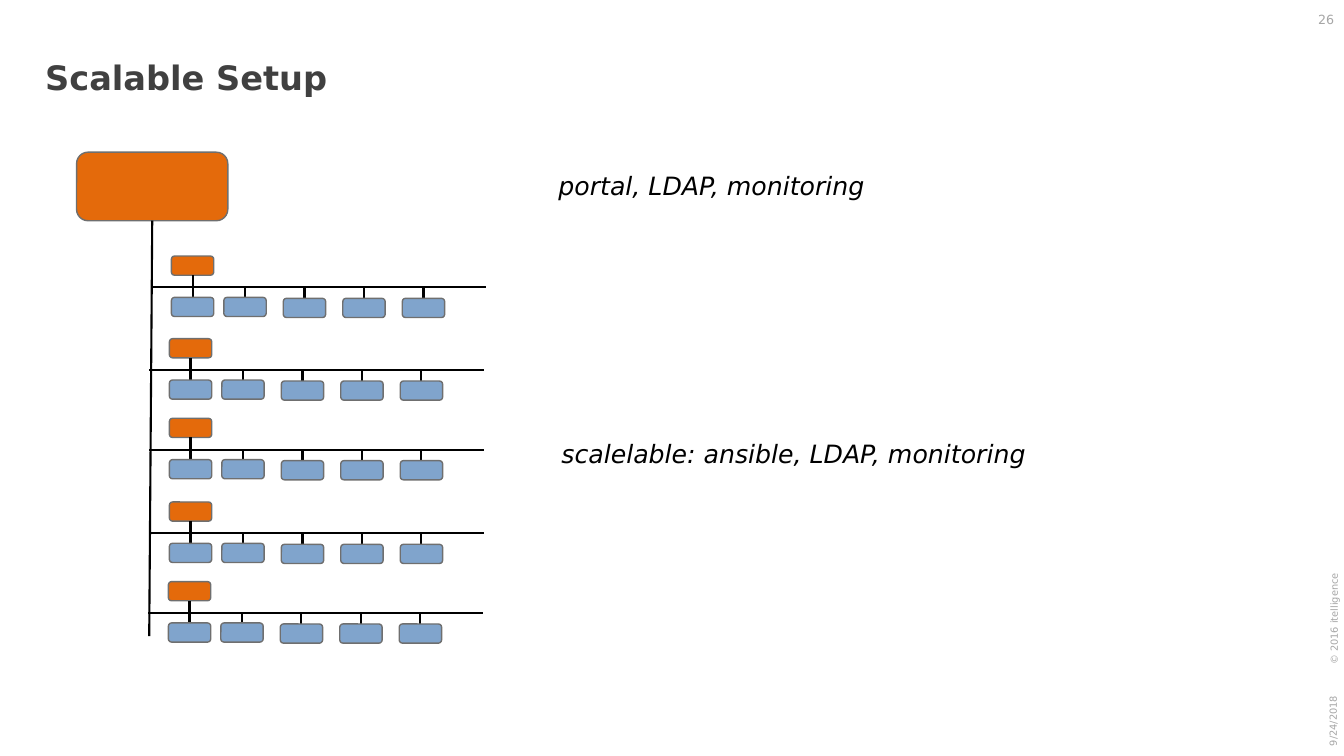
from lxml import etree
from pptx import Presentation
from pptx.dml.color import RGBColor
from pptx.enum.shapes import MSO_CONNECTOR, MSO_SHAPE
from pptx.enum.text import MSO_ANCHOR, PP_ALIGN
from pptx.oxml.ns import qn
from pptx.util import Inches, Pt

ROUNDED, STRAIGHT = MSO_SHAPE.ROUNDED_RECTANGLE, MSO_CONNECTOR.STRAIGHT
TOP, MIDDLE = MSO_ANCHOR.TOP, MSO_ANCHOR.MIDDLE
LEFT, RIGHT = PP_ALIGN.LEFT, PP_ALIGN.RIGHT

ORANGE = RGBColor(0xE4, 0x6A, 0x0B)
BLUE = RGBColor(0x80, 0xA4, 0xCC)
OUTLINE = RGBColor(0x6F, 0x6F, 0x6F)
BLACK = RGBColor(0, 0, 0)
DARK_GRAY = RGBColor(0x40, 0x40, 0x40)
LIGHT_GRAY = RGBColor(0xA6, 0xA6, 0xA6)

# Content: text, box (left, top, width, height), format
TITLE = {"size": Pt(24), "bold": True, "color": DARK_GRAY, "anchor": TOP}
NOTE = {"size": Pt(18), "italic": True, "color": BLACK}
FOOTER = {"size": Pt(7), "color": LIGHT_GRAY, "rotation": 270}
PAGE = {"size": Pt(9), "color": LIGHT_GRAY, "align": RIGHT}
TEXTS = [
    ("Scalable Setup", (0.35, 0.56, 3.05, 0.84), TITLE),
    ("portal, LDAP, monitoring", (5.44, 1.64, 3.32, 0.4), NOTE),
    ("scalelable: ansible, LDAP, monitoring", (5.47, 4.3, 4.97, 0.4), NOTE),
    ("9/24/2018", (12.82, 7, 0.8, 0.2), FOOTER),
    ("© 2016 itelligence", (10.48, 3.84, 5.5, 0.2), FOOTER),
    ("26", (12.8, 0, 0.53, 0.39), PAGE),
]

# Network: head server, trunk and the top left corner of each cluster
HEAD = (0.76, 1.51, 1.5, 0.68)
TRUNK = (1.48, 6.31, 1.51, 2.19)
CLUSTERS = [(1.7, 2.54), (1.68, 3.36), (1.68, 4.15), (1.68, 4.98), (1.67, 5.77)]
BOX_W, BOX_H = 0.42, 0.19
BUS_START, BUS_END, BUS_DROP = -0.2, 3.12, 0.31
NODE_COUNT, FIRST_GAP, NODE_PITCH = 5, 0.52, 0.59
NODE_DROP = 0.41

prs = Presentation()
prs.slide_width, prs.slide_height = Inches(13.33), Inches(7.5)
slide = prs.slides.add_slide(prs.slide_layouts[6])


def add_text(text, box, style):
    label = slide.shapes.add_textbox(*map(Inches, box))
    label.rotation = style.get("rotation", 0)
    frame = label.text_frame
    frame.word_wrap = True
    frame.vertical_anchor = style.get("anchor", MIDDLE)
    paragraph = frame.paragraphs[0]
    paragraph.alignment = style.get("align", LEFT)
    if style is TITLE:
        paragraph.line_spacing = 0.9
    run = paragraph.add_run()
    run.text = text
    run.font.name = "DejaVu Sans"
    run.font.color.rgb = style["color"]
    for attribute in ("size", "bold", "italic"):
        if attribute in style:
            setattr(run.font, attribute, style[attribute])


def add_server(left, top, width, height, color):
    server = slide.shapes.add_shape(ROUNDED, *map(Inches, (left, top, width, height)))
    server.shadow.inherit = False
    server.fill.solid()
    server.fill.fore_color.rgb = color
    server.line.color.rgb = OUTLINE
    server.line.width = Pt(1)


def add_cable(x1, y1, x2, y2):
    cable = slide.shapes.add_connector(STRAIGHT, *map(Inches, (x1, y1, x2, y2)))
    cable.line.color.rgb = BLACK
    cable.line.width = Pt(1.5)
    etree.SubElement(cable._element.spPr, qn("a:effectLst"))


def add_cluster(left, top):
    # Management server and bus
    bus_y = top + BUS_DROP
    add_server(left, top, BOX_W, BOX_H, ORANGE)
    add_cable(left + BUS_START, bus_y, left + BUS_END, bus_y)
    # Nodes, each hanging from the bus
    for i in range(NODE_COUNT):
        node_x = left + (FIRST_GAP + (i - 1) * NODE_PITCH if i else 0)
        node_y = top + NODE_DROP + (0.01 if i > 1 else 0)
        center = node_x + BOX_W / 2
        cable_top = bus_y if i else top + BOX_H
        add_cable(center, cable_top, center, node_y + BOX_H / 2 if i else node_y)
        add_server(node_x, node_y, BOX_W, BOX_H, BLUE)


# Texts
for text, box, style in TEXTS:
    add_text(text, box, style)

# Network
add_server(*HEAD, ORANGE)
add_cable(*TRUNK)
for left, top in CLUSTERS:
    add_cluster(left, top)

prs.save("out.pptx")
